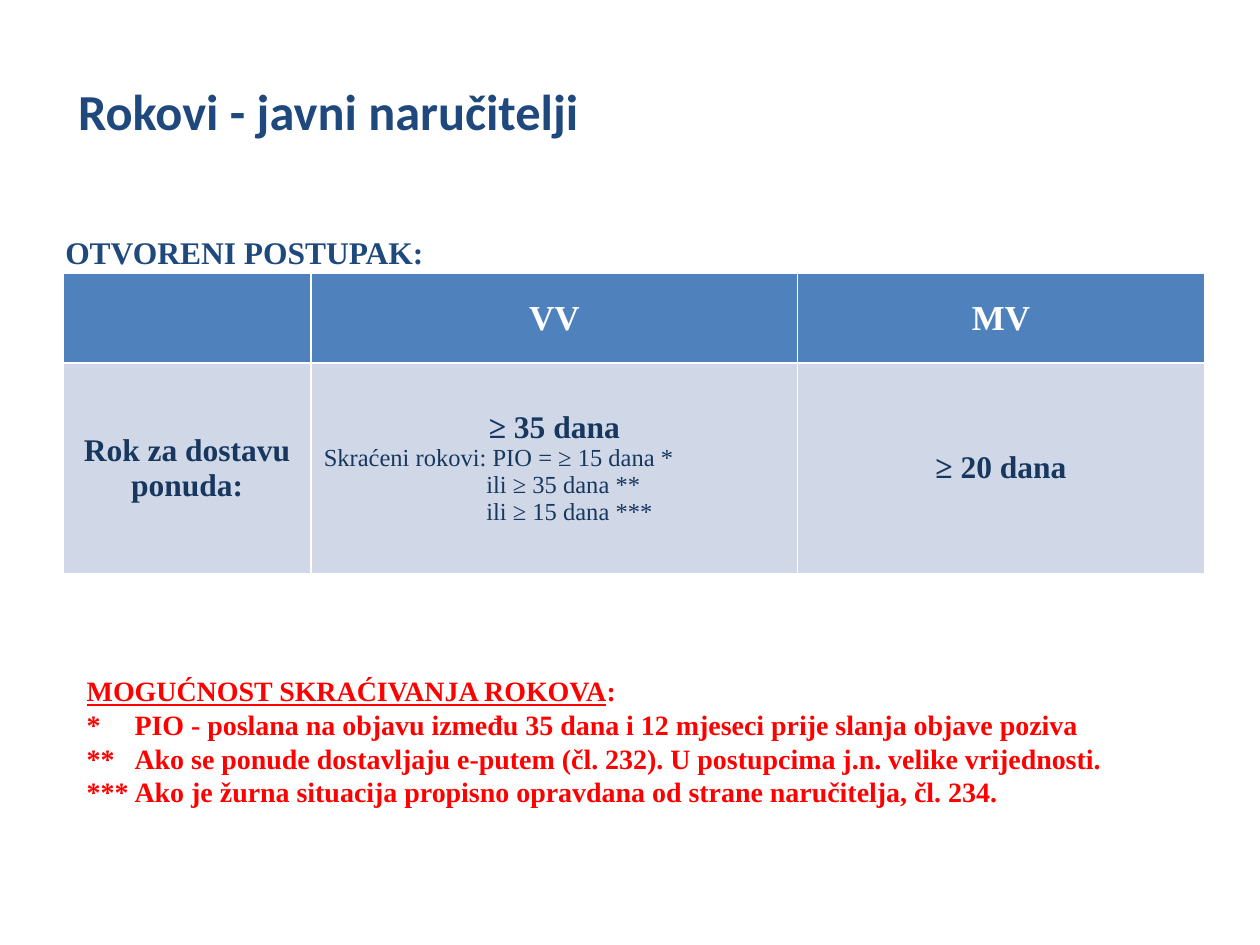
"""Build the slide on tender deadlines for public contracting authorities."""
from dataclasses import dataclass

from pptx import Presentation
from pptx.dml.color import RGBColor
from pptx.enum.text import MSO_ANCHOR, MSO_AUTO_SIZE, PP_ALIGN
from pptx.util import Inches, Pt

LEFT, CENTER = PP_ALIGN.LEFT, PP_ALIGN.CENTER
MIDDLE = MSO_ANCHOR.MIDDLE
NO_FIT, GROW = MSO_AUTO_SIZE.NONE, MSO_AUTO_SIZE.SHAPE_TO_FIT_TEXT
SERIF = "Times New Roman"
BLUE, NAVY, RED, WHITE = "1F497D", "17375E", "FF0000", "FFFFFF"
HEADER_FILL, BODY_FILL = "4F81BD", "D0D8E8"


@dataclass(frozen=True)
class Line:
    """One paragraph with its format; margin and indent are in inches."""
    text: str
    size: float
    color: str
    bold: bool = True
    align: PP_ALIGN = LEFT
    font: str = SERIF
    margin: float = 0
    indent: float = 0


@dataclass(frozen=True)
class Cell:
    """Lines of one table cell and its fill."""
    lines: tuple[Line, ...]
    fill: str


def rgb(value: str) -> RGBColor:
    """Turn a hex string into a colour."""
    return RGBColor.from_string(value)


def write_lines(frame, lines: tuple[Line, ...]) -> None:
    """Write the lines into a text frame, one paragraph each."""
    for index, line in enumerate(lines):
        para = frame.add_paragraph() if index else frame.paragraphs[0]
        para.add_run().text = line.text
        para.alignment = line.align
        font = para.font
        font.name, font.size, font.bold = line.font, Pt(line.size), line.bold
        font.color.rgb = rgb(line.color)
        if line.margin:
            properties = para._p.get_or_add_pPr()
            properties.set("marL", str(Inches(line.margin)))
            properties.set("indent", str(Inches(line.indent)))


def add_text(page, bounds: tuple[float, ...], lines: tuple[Line, ...], wrap: bool):
    """Add a text box and return its text frame."""
    frame = page.shapes.add_textbox(*map(Inches, bounds)).text_frame
    frame.word_wrap = wrap
    frame.auto_size = GROW
    write_lines(frame, lines)
    return frame


def add_title(page, line: Line) -> None:
    """Place and fill the title placeholder."""
    title = page.shapes.title
    title.left, title.top, title.width, title.height = map(Inches, (0.43, 0.6, 9, 0.55))
    frame = title.text_frame
    frame.auto_size = NO_FIT
    frame.vertical_anchor = MIDDLE
    write_lines(frame, (line,))
    frame.paragraphs[0].space_before = Pt(3)


def add_deadlines(page, grid: tuple[tuple[Cell, ...], ...]) -> None:
    """Add the table of deadlines."""
    widths, heights = (1.97, 3.86, 3.23), (0.71, 1.67)
    bounds = map(Inches, (0.5, 2.17, sum(widths), sum(heights)))
    table = page.shapes.add_table(len(heights), len(widths), *bounds).table
    for column, width in zip(table.columns, widths):
        column.width = Inches(width)
    for row, height, contents in zip(table.rows, heights, grid):
        row.height = Inches(height)
        for cell, content in zip(row.cells, contents):
            cell.fill.solid()
            cell.fill.fore_color.rgb = rgb(content.fill)
            cell.vertical_anchor = MIDDLE
            write_lines(cell.text_frame, content.lines)


def heading(*texts: str) -> Cell:
    """Make a header cell."""
    return Cell(tuple(Line(text, 20, WHITE, align=CENTER) for text in texts), HEADER_FILL)


def term(text: str, *details: Line) -> Cell:
    """Make a body cell with a bold first line."""
    return Cell((Line(text, 18, NAVY, align=CENTER), *details), BODY_FILL)


def detail(text: str, margin: float = 0) -> Line:
    """Make a small line for a shortened deadline."""
    return Line(text, 14, NAVY, bold=False, margin=margin)


def note(mark: str, text: str) -> Line:
    """Make a footnote with a hanging mark."""
    return Line(f"{mark}\t{text}", 16, RED, margin=0.38, indent=-0.38)


def main() -> None:
    """Build and save the deck."""
    deck = Presentation()
    deck.slide_width, deck.slide_height = Inches(10), Inches(7.5)
    page = deck.slides.add_slide(deck.slide_layouts[5])
    add_title(page, Line("Rokovi - javni naručitelji", 28.8, BLUE, font="Calibri",
                         margin=0.1, indent=-0.01))
    add_text(page, (0.42, 1.8, 3.07, 0.4), (Line("OTVORENI POSTUPAK:", 18, BLUE),), False)
    add_deadlines(page, (
        (heading(), heading("VV"), heading("MV")),
        (
            term("Rok za dostavu ponuda:"),
            term("≥ 35 dana",
                 detail("Skraćeni rokovi: PIO = ≥ 15 dana *"),
                 detail("ili ≥ 35 dana **", 1.29),
                 detail("ili ≥ 15 dana ***", 1.29)),
            term("≥ 20 dana"),
        ),
    ))
    notes = add_text(page, (0.59, 5.3, 8.74, 1.18), (
        Line("MOGUĆNOST SKRAĆIVANJA ROKOVA", 16, RED),
        note("*", "PIO - poslana na objavu između 35 dana i 12 mjeseci prije slanja objave poziva"),
        note("**", "Ako se ponude dostavljaju e-putem (čl. 232). "
                   "U postupcima j.n. velike vrijednosti."),
        note("***", "Ako je žurna situacija propisno opravdana od strane naručitelja, čl. 234."),
    ), True)
    caption = notes.paragraphs[0]
    caption.runs[0].font.underline = True
    caption.add_run().text = ":"
    deck.save("out.pptx")


if __name__ == "__main__":
    main()
